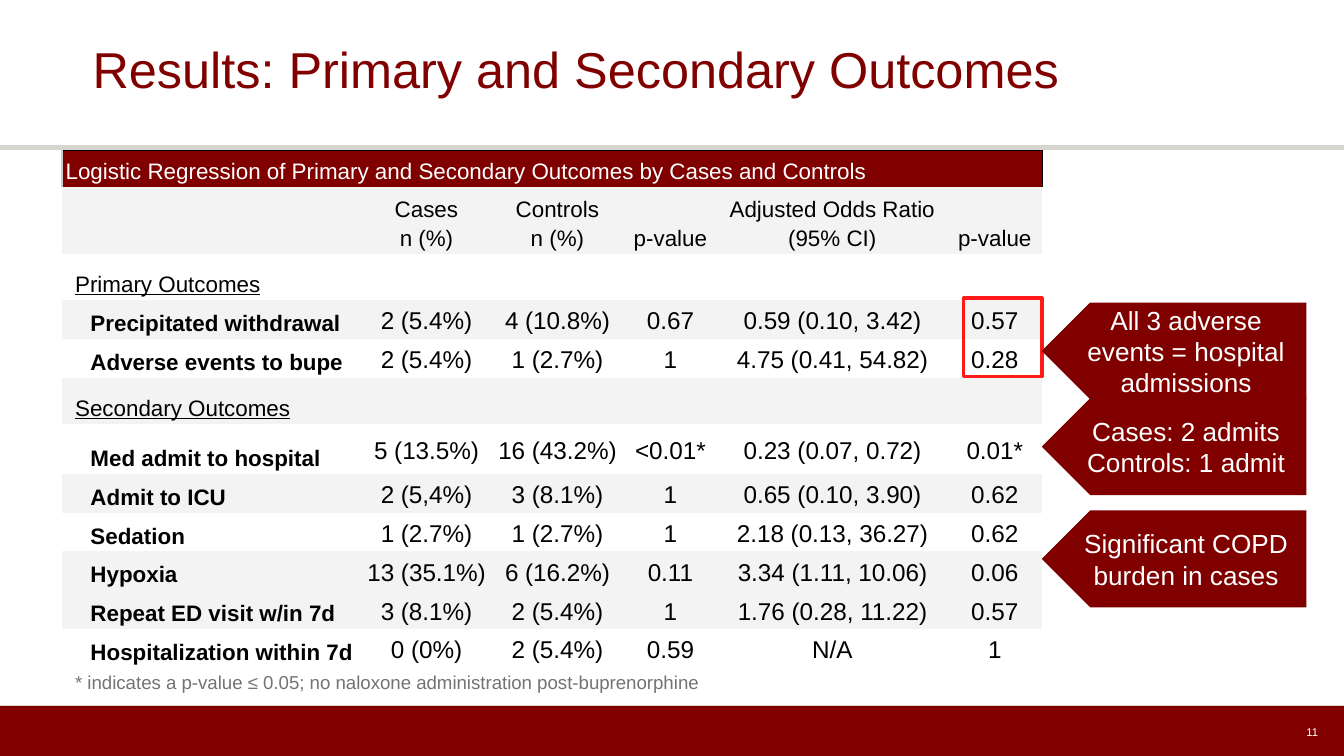
from dataclasses import dataclass
from typing import Optional

from lxml.etree import SubElement
from pptx import Presentation
from pptx.dml.color import RGBColor as RGB
from pptx.enum.shapes import MSO_CONNECTOR as Conn, MSO_SHAPE as Shape
from pptx.enum.text import MSO_ANCHOR as Anchor, MSO_AUTO_SIZE as AutoSize, PP_ALIGN as Align
from pptx.oxml.ns import qn
from pptx.util import Cm, Pt


@dataclass(frozen=True)
class Theme:
    font: str = "Arial"
    maroon: str = "800000"
    rule: str = "D6D6CE"
    band: str = "F3F3F3"
    white: str = "FFFFFF"
    black: str = "000000"
    edge: str = "CCCCCC"
    note: str = "737373"
    alert: str = "FF1A1A"
    title_pt: float = 27
    callout_pt: float = 14
    value_pt: float = 13
    label_pt: float = 12
    note_pt: float = 10
    number_pt: float = 6


@dataclass(frozen=True)
class Row:
    label: str
    values: tuple = ()
    kind: str = "outcome"
    height: float = 0.69
    shaded: bool = False


@dataclass(frozen=True)
class Callout:
    top: float
    text: str


T = Theme()
SLIDE_W, SLIDE_H = 25.4, 14.29
TABLE_X, TABLE_Y = 1.17, 2.84
COL_WIDTHS = (5.66, 2.46, 2.49, 1.78, 4.34, 1.8)
NO_STYLE = "{2D5ABB26-0587-4C30-8999-92F81FD0307C}"

ROWS = (
    Row("Logistic Regression of Primary and Secondary Outcomes by Cases and Controls", kind="caption"),
    Row("", ("Cases\nn (%)", "Controls\nn (%)", "p-value", "Adjusted Odds Ratio (95% CI)", "p-value"),
        "header", 1.19, True),
    Row("Primary Outcomes", kind="group", height=0.87),
    Row("Precipitated withdrawal", ("2 (5.4%)", "4 (10.8%)", "0.67", "0.59 (0.10, 3.42)", "0.57"), shaded=True),
    Row("Adverse events to bupe", ("2 (5.4%)", "1 (2.7%)", "1", "4.75 (0.41, 54.82)", "0.28")),
    Row("Secondary Outcomes", kind="group", height=0.87, shaded=True),
    Row("Med admit to hospital", ("5 (13.5%)", "16 (43.2%)", "<0.01*", "0.23 (0.07, 0.72)", "0.01*"), height=0.95),
    Row("Admit to ICU", ("2 (5,4%)", "3 (8.1%)", "1", "0.65 (0.10, 3.90)", "0.62"), shaded=True),
    Row("Sedation", ("1 (2.7%)", "1 (2.7%)", "1", "2.18 (0.13, 36.27)", "0.62")),
    Row("Hypoxia", ("13 (35.1%)", "6 (16.2%)", "0.11", "3.34 (1.11, 10.06)", "0.06"), shaded=True),
    Row("Repeat ED visit w/in 7d", ("3 (8.1%)", "2 (5.4%)", "1", "1.76 (0.28, 11.22)", "0.57"), shaded=True),
    Row("Hospitalization within 7d", ("0 (0%)", "2 (5.4%)", "0.59", "N/A", "1")),
)

CALLOUTS = (
    Callout(5.72, "All 3 adverse events = hospital admissions"),
    Callout(7.53, "Cases: 2 admits\nControls: 1 admit"),
    Callout(9.65, "Significant COPD burden in cases"),
)


def write(tf, text: str, *, size: float, color: str = T.black, bold: bool = False,
          underline: bool = False, align=Align.LEFT, spacing: float = 1.0) -> None:
    """Fill a text frame, one paragraph per line of text."""
    for i, line in enumerate(text.split("\n")):
        p = tf.add_paragraph() if i else tf.paragraphs[0]
        p.alignment, p.line_spacing = align, spacing
        if not line:
            SubElement(p._p, qn("a:endParaRPr"), sz=str(int(size * 100)))
            continue
        r = p.add_run()
        r.text = line
        r.font.name, r.font.size = T.font, Pt(size)
        r.font.bold, r.font.underline = bold, underline
        r.font.color.rgb = RGB.from_string(color)


def set_margins(box, x: float, y: float) -> None:
    box.margin_left = box.margin_right = Cm(x)
    box.margin_top = box.margin_bottom = Cm(y)


def add_rule(s, y: float, width: float) -> None:
    """Draw a line across the whole slide."""
    line = s.shapes.add_connector(Conn.STRAIGHT, 0, Cm(y), Cm(SLIDE_W), Cm(y))
    line.line.color.rgb = RGB.from_string(T.rule)
    line.line.width = Pt(width)
    SubElement(line._element.spPr, qn("a:effectLst"))


def add_box(s, kind, x: float, y: float, w: float, h: float, fill: Optional[str] = None,
            outline: Optional[str] = None):
    sp = s.shapes.add_shape(kind, Cm(x), Cm(y), Cm(w), Cm(h))
    sp.shadow.inherit = False
    if fill:
        sp.fill.solid()
        sp.fill.fore_color.rgb = RGB.from_string(fill)
    else:
        sp.fill.background()
    if outline:
        sp.line.color.rgb = RGB.from_string(outline)
        sp.line.width = Pt(2)
    else:
        sp.line.fill.background()
    return sp


def add_text(s, x: float, y: float, w: float, h: float, margins: tuple, anchor, text: str, **fmt) -> None:
    tf = s.shapes.add_textbox(Cm(x), Cm(y), Cm(w), Cm(h)).text_frame
    tf.word_wrap, tf.vertical_anchor = True, anchor
    set_margins(tf, *margins)
    write(tf, text, **fmt)


def add_border(cell, side: str, color: str) -> None:
    ln = SubElement(cell._tc.get_or_add_tcPr(), qn(f"a:ln{side}"), w=str(Pt(0.75)))
    SubElement(SubElement(ln, qn("a:solidFill")), qn("a:srgbClr"), val=color)


def fill_cell(cell, row: Row, col: int) -> None:
    """Format one table cell by its row kind and column."""
    is_value = col > 0 and row.kind == "outcome"
    cell.vertical_anchor = Anchor.MIDDLE if is_value else Anchor.BOTTOM
    set_margins(cell, 0.07, 0.05)
    if col == 0 and row.kind in ("group", "outcome"):
        cell.margin_left = Cm(0.25 if row.kind == "group" else 0.54)
    cell.fill.solid()
    fill = T.maroon if row.kind == "caption" else T.band if row.shaded else T.white
    cell.fill.fore_color.rgb = RGB.from_string(fill)
    text = row.label if col == 0 else row.values[col - 1] if row.values else ""
    write(cell.text_frame, text, spacing=1.15,
          size=T.value_pt if is_value else T.label_pt,
          color=T.white if row.kind == "caption" else T.black,
          bold=col == 0 and row.kind == "outcome", underline=row.kind == "group",
          align=Align.CENTER if col else Align.LEFT)


def add_outcomes_table(s) -> None:
    frame = s.shapes.add_table(len(ROWS), len(COL_WIDTHS), Cm(TABLE_X), Cm(TABLE_Y),
                               Cm(sum(COL_WIDTHS)), Cm(sum(r.height for r in ROWS)))
    table = frame.table
    table.first_row = table.horz_banding = False
    table._tbl.tblPr.find(qn("a:tableStyleId")).text = NO_STYLE
    for column, width in zip(table.columns, COL_WIDTHS):
        column.width = Cm(width)
    caption = table.cell(0, 0)
    caption.merge(table.cell(0, len(COL_WIDTHS) - 1))
    for side, color in (("L", T.edge), ("R", T.black), ("T", T.black)):
        add_border(caption, side, color)
    for i, row in enumerate(ROWS):
        table.rows[i].height = Cm(row.height)
        for col in range(len(COL_WIDTHS)):
            fill_cell(table.cell(i, col), row, col)


def add_callout(s, callout: Callout) -> None:
    sp = add_box(s, Shape.PENTAGON, 19.69, callout.top, 5, 1.83, T.maroon)
    sp._element.spPr.xfrm.set("flipH", "1")
    tf = sp.text_frame
    tf.word_wrap, tf.vertical_anchor = True, Anchor.MIDDLE
    write(tf, callout.text, size=T.callout_pt, color=T.white, align=Align.CENTER)


def main() -> None:
    prs = Presentation()
    prs.slide_width, prs.slide_height = Cm(SLIDE_W), Cm(SLIDE_H)
    s = prs.slides.add_slide(prs.slide_layouts[5])

    # Title
    title = s.shapes.title
    title.left, title.top, title.width, title.height = Cm(1.75), Cm(0), Cm(21.9), Cm(2.74)
    tf = title.text_frame
    tf.auto_size, tf.word_wrap, tf.vertical_anchor = AutoSize.NONE, True, Anchor.MIDDLE
    set_margins(tf, 0, 0.1)
    write(tf, "Results: Primary and Secondary Outcomes", size=T.title_pt, color=T.maroon, spacing=0.9)

    # Header rule, footer band and slide number
    add_rule(s, 2.79, 3)
    add_box(s, Shape.RECTANGLE, 0, 13.34, SLIDE_W, SLIDE_H - 13.34, T.maroon)
    add_rule(s, 13.34, 0.75)
    add_text(s, 17.93, 13.46, 7.16, 0.76, (0.18, 0.1), Anchor.MIDDLE, "11",
             size=T.number_pt, color=T.white, align=Align.RIGHT)

    # Table and footnote
    add_outcomes_table(s)
    add_text(s, TABLE_X, 12.47, 18.26, 0.94, (0.25, 0.25), Anchor.TOP,
             "* indicates a p-value ≤ 0.05; no naloxone administration post-buprenorphine",
             size=T.note_pt, color=T.note)

    # Highlighted p-values and callouts
    add_box(s, Shape.RECTANGLE, 18.21, 5.64, 1.48, 1.48, outline=T.alert)
    for callout in CALLOUTS:
        add_callout(s, callout)

    prs.save("out.pptx")


if __name__ == "__main__":
    main()
